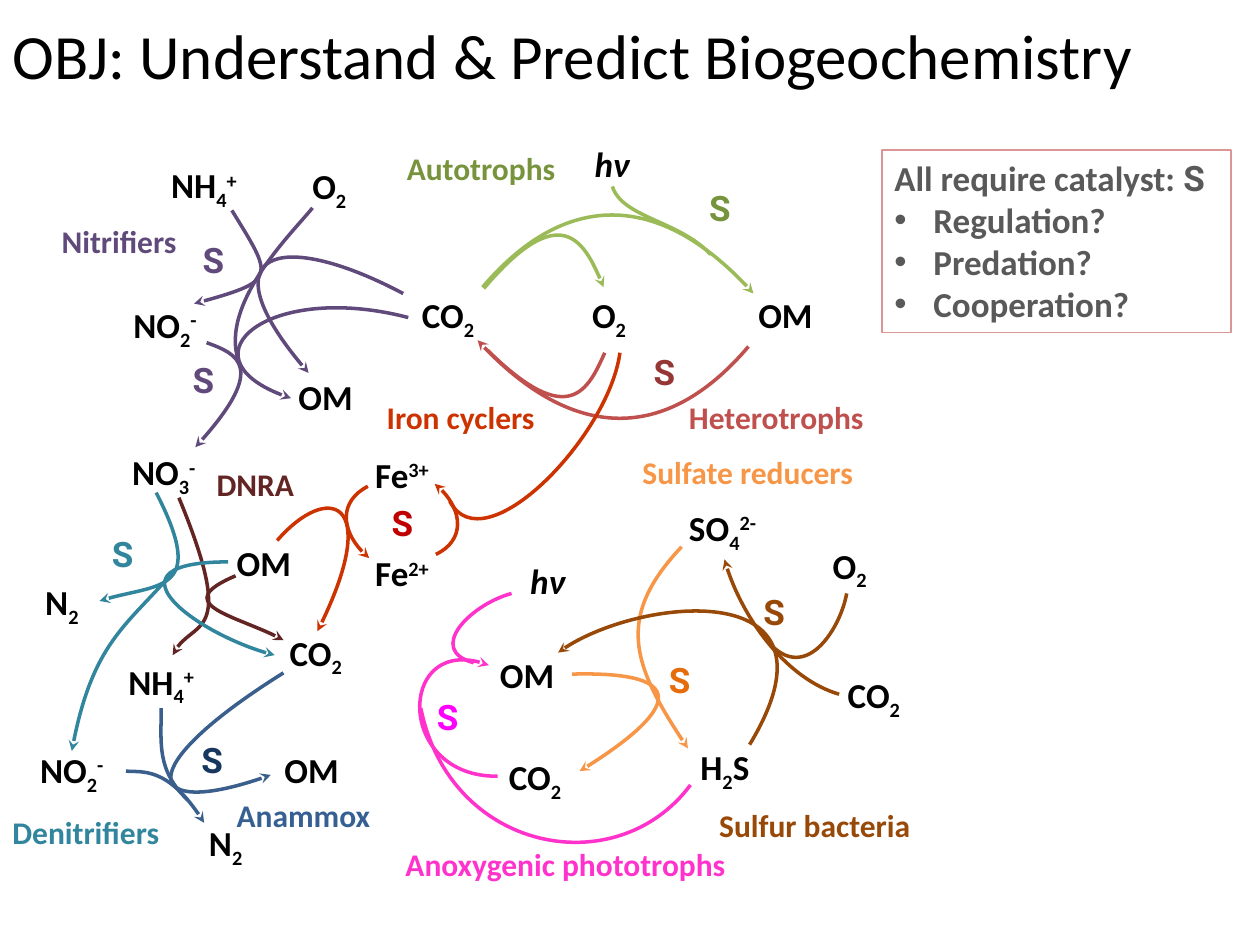
from lxml import etree
from pptx import Presentation
from pptx.dml.color import RGBColor
from pptx.enum.shapes import MSO_SHAPE
from pptx.enum.text import MSO_ANCHOR, MSO_AUTO_SIZE, PP_ALIGN
from pptx.oxml.ns import qn
from pptx.util import Emu, Pt

RECT = MSO_SHAPE.RECTANGLE
TOP, MIDDLE = MSO_ANCHOR.TOP, MSO_ANCHOR.MIDDLE
FIT, FIXED = MSO_AUTO_SIZE.SHAPE_TO_FIT_TEXT, MSO_AUTO_SIZE.NONE
LEFT = PP_ALIGN.LEFT
PX = 9144  # 100 px to the inch
BASELINES = {"_": -25, "^": 30}

PURPLE, GREEN, RED, ORANGE = "604A7B", "9BBB59", "C0504D", "F79646"
BROWN, PINK, IRON, MAROON = "984807", "FF33CC", "CC3300", "632523"
TEAL, BLUE = "31859C", "3A5F8C"

# Formula, with _ and ^ marking lowered and raised parts: width and positions
SPECIES = {
    "CO|_2": (63, [(325, 228), (394, 595), (663, 530), (220, 496)]),
    "OM": (64, [(592, 228), (387, 514), (178, 425), (216, 589), (227, 293)]),
    "O|_2": (49, [(460, 228), (651, 427), (238, 126)]),
    "NO|_3|^-": (73, [(95, 353)]),
    "NO|_2|^-": (73, [(96, 236), (22, 589)]),
    "N|_2": (48, [(26, 456), (156, 647)]),
    "NH|_4|^+": (75, [(92, 519), (126, 125)]),
    "SO|_4|^2-": (77, [(537, 397)]),
    "H|_2|S": (61, [(546, 587)]),
    "Fe|^3+": (66, [(288, 355)]),
    "Fe|^2+": (66, [(288, 433)]),
}
LIGHT = [(462, 108), (411, 439)]

# Colour, curves with an arrowhead at the end, plain curves (x, y of four points)
PATHWAYS = [
    (ORANGE, [(541, 434, 489, 489, 502, 529, 546, 594),
              (454, 535, 569, 532, 511, 581, 460, 612)], []),
    (GREEN, [(383, 228, 444, 156, 521, 147, 598, 233),
             (384, 229, 445, 157, 467, 198, 479, 228)],
     [(486, 148, 494, 173, 539, 175, 564, 202)]),
    (RED, [(594, 275, 533, 347, 457, 355, 379, 270)],
     [(387, 278, 452, 342, 467, 309, 480, 280)]),
    (BROWN, [(595, 591, 676, 457, 501, 474, 443, 518),
             (666, 551, 625, 539, 587, 488, 575, 444)],
     [(602, 499, 635, 552, 667, 500, 672, 471)]),
    (PINK, [(395, 616, 315, 617, 315, 500, 388, 528)],
     [(334, 562, 357, 676, 489, 702, 548, 623),
      (406, 471, 373, 480, 338, 516, 376, 526)]),
    (IRON, [(292, 386, 269, 398, 271, 425, 293, 443),
            (346, 440, 369, 429, 367, 401, 345, 384),
            (220, 429, 260, 383, 305, 396, 252, 501)],
     [(492, 280, 483, 347, 384, 449, 357, 398)]),
    (MAROON, [(187, 457, 135, 479, 190, 489, 225, 508),
              (142, 395, 187, 504, 151, 491, 137, 520)], []),
    (TEAL, [(124, 391, 164, 469, 124, 463, 79, 477),
            (181, 446, 80, 446, 158, 505, 218, 520),
            (139, 452, 103, 495, 73, 508, 57, 596)], []),
    (BLUE, [(100, 612, 113, 613, 134, 608, 162, 653),
            (225, 534, 102, 611, 116, 651, 215, 615)],
     [(149, 635, 124, 611, 128, 590, 128, 562)]),
    (PURPLE, [(164, 272, 189, 281, 213, 292, 155, 355),
              (184, 167, 216, 219, 221, 223, 154, 241),
              (320, 233, 220, 180, 162, 201, 245, 296),
              (324, 252, 213, 223, 139, 286, 231, 316)],
     [(248, 165, 233, 184, 170, 244, 191, 291)]),
]

GUILDS = [
    ("Autotrophs", 313, 113, 139, "77933C"),
    ("Heterotrophs", 537, 311, 160, RED),
    ("Sulfate reducers", 500, 355, 189, ORANGE),
    ("Sulfur bacteria", 561, 635, 173, BROWN),
    ("Anoxygenic phototrophs", 312, 666, 276, PINK),
    ("Nitrifiers", 39, 171, 112, PURPLE),
    ("Iron cyclers", 297, 311, 138, IRON),
    ("Denitrifiers", 0, 640, 138, TEAL),
    ("DNRA", 162, 364, 82, MAROON),
    ("Anammox", 178, 627, 127, "376092"),
]
CATALYSTS = [
    (553, 143, "77933C"), (509, 273, "953735"), (596, 464, BROWN),
    (521, 518, "E46C0A"), (337, 547, "FF00FF"), (151, 184, PURPLE),
    (143, 280, PURPLE), (301, 393, "C00000"), (79, 418, TEAL),
    (150, 581, "17375E"),
]


def px(*values):
    return [Emu(v * PX) for v in values]


def rgb(value):
    return RGBColor.from_string(value)


def bezier(points, t):
    """Point on a cubic curve at t between 0 and 1."""
    weights = ((1 - t) ** 3, 3 * t * (1 - t) ** 2, 3 * t * t * (1 - t), t ** 3)
    return tuple(round(sum(w * p[axis] for w, p in zip(weights, points)))
                 for axis in (0, 1))


class SlideBuilder:
    font, size, line_width = "Calibri", 20, 2

    def __init__(self, slide):
        self.slide = slide
        self.shapes = slide.shapes

    def run(self, p, text, color="000000", size=None, font=None, bold=True,
            italic=None, baseline=0):
        r = p.add_run()
        r.text = text
        f = r.font
        f.name, f.size = font or self.font, Pt(size or self.size)
        f.bold, f.italic = bold, italic
        f.color.rgb = rgb(color)
        if baseline:
            r._r.get_or_add_rPr().set("baseline", str(baseline * 1000))

    def title(self, text, *box):
        sp = self.shapes.title
        sp.left, sp.top, sp.width, sp.height = px(*box)
        tf = sp.text_frame
        tf.auto_size, tf.vertical_anchor = FIXED, MIDDLE
        p = tf.paragraphs[0]
        p.alignment = LEFT
        self.run(p, text, size=36, bold=False)

    def label(self, text, x, y, w, h=44, **style):
        tf = self.shapes.add_textbox(*px(x, y, w, h)).text_frame
        tf.word_wrap, tf.auto_size = False, FIT
        for part in text.split("|"):
            self.run(tf.paragraphs[0], part.lstrip("_^"),
                     baseline=BASELINES.get(part[0], 0), **style)

    def curve(self, shapes, coords, color, arrow):
        """Cubic curve whose frame fits the curve, not its control points."""
        points = list(zip(px(*coords[::2]), px(*coords[1::2])))
        builder = shapes.build_freeform(*points[0])
        builder.add_line_segments(
            [bezier(points, i / 40) for i in range(1, 41)], close=False)
        sp = builder.convert_to_shape()
        outline = sp._element.xpath(".//a:path")[0]
        for segment in outline.findall(qn("a:lnTo")):
            outline.remove(segment)
        cubic = etree.SubElement(outline, qn("a:cubicBezTo"))
        for x, y in points[1:]:
            etree.SubElement(cubic, qn("a:pt"),
                             x=str(x - sp.left), y=str(y - sp.top))
        sp.shadow.inherit = False
        sp.fill.background()
        sp.line.color.rgb, sp.line.width = rgb(color), Pt(self.line_width)
        if arrow:
            etree.SubElement(sp.line._get_or_add_ln(), qn("a:tailEnd"),
                             type="stealth")

    def pathway(self, color, arrows, plain):
        group = self.shapes.add_group_shape()
        for curves, arrow in ((arrows, True), (plain, False)):
            for coords in curves:
                self.curve(group.shapes, coords, color, arrow)

    def question_box(self, heading, symbol, questions, *box):
        gray = "595959"
        sp = self.shapes.add_shape(RECT, *px(*box))
        sp.shadow.inherit = False
        sp.fill.background()
        sp.line.color.rgb, sp.line.width = rgb("D99694"), Pt(0.75)
        tf = sp.text_frame
        tf.word_wrap, tf.auto_size, tf.vertical_anchor = True, FIT, TOP
        p = tf.paragraphs[0]
        p.alignment = LEFT
        self.run(p, heading, gray)
        self.run(p, symbol, gray, font="Roboto")
        indent = px(31)[0]
        for question in questions:
            p = tf.add_paragraph()
            p.alignment = LEFT
            pPr = p._p.get_or_add_pPr()
            pPr.set("marL", str(indent))
            pPr.set("indent", str(-indent))
            etree.SubElement(pPr, qn("a:buFont"), typeface="Arial")
            etree.SubElement(pPr, qn("a:buChar"), char="•")
            self.run(p, question, gray)


def main():
    prs = Presentation()
    prs.slide_width, prs.slide_height = px(1000, 750)
    s = SlideBuilder(prs.slides.add_slide(prs.slide_layouts[5]))
    s.title("OBJ: Understand & Predict Biogeochemistry", 0, 8, 1000, 71)
    s.question_box("All require catalyst: ", "S",
                   ["Regulation?", "Predation?", "Cooperation?"],
                   700, 119, 277, 145)
    for pathway in PATHWAYS:
        s.pathway(*pathway)
    for formula, (width, places) in SPECIES.items():
        for x, y in places:
            s.label(formula, x, y, width)
    for x, y in LIGHT:
        s.label("hν", x, y, 49, italic=True)
    for name, x, y, width, color in GUILDS:
        s.label(name, x, y, width, 40, color=color, size=18)
    for x, y, color in CATALYSTS:
        s.label("S", x, y, 44, color=color, font="Roboto")
    prs.save("out.pptx")


if __name__ == "__main__":
    main()
